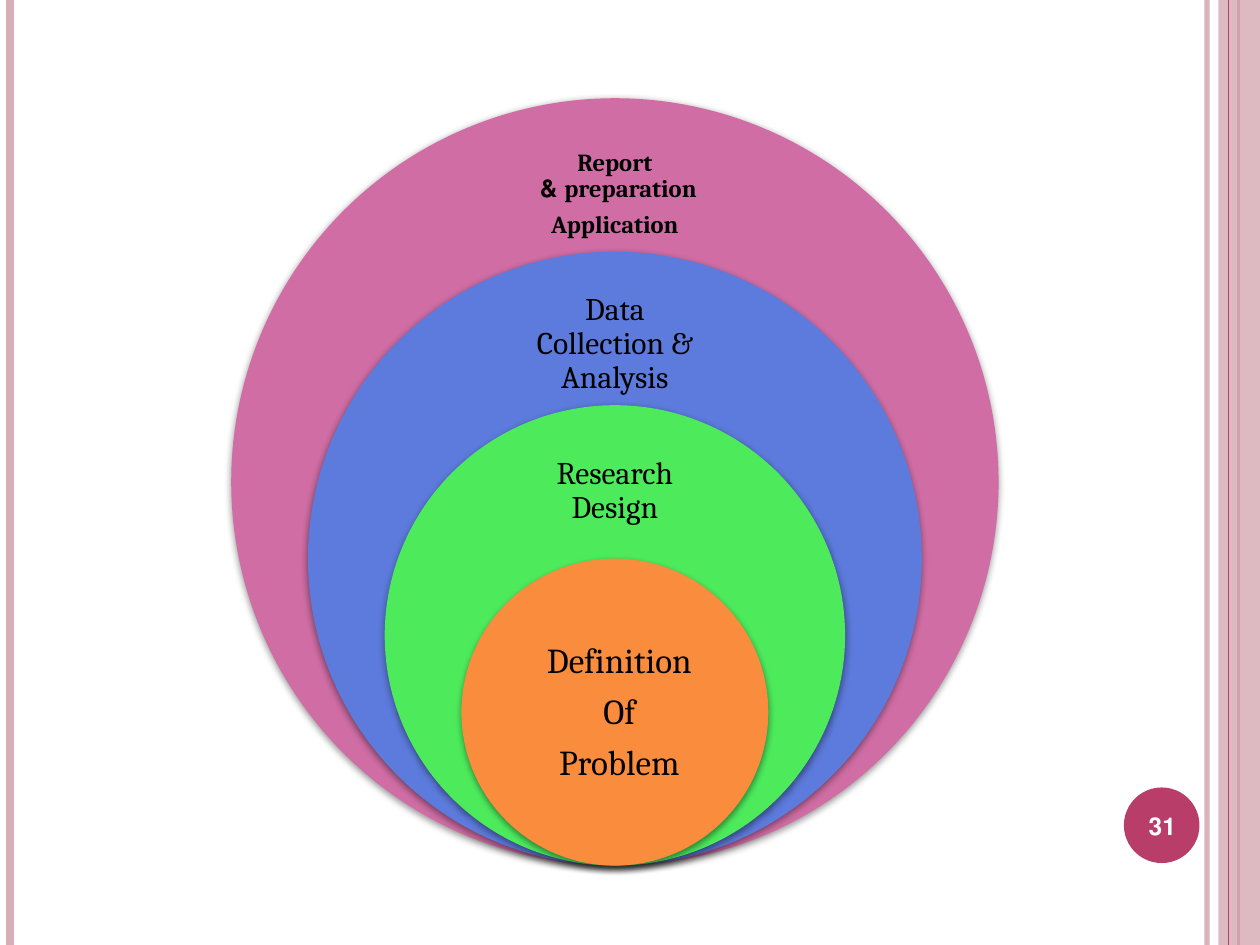
from lxml.etree import SubElement
from pptx import Presentation
from pptx.dml.color import RGBColor
from pptx.enum.shapes import MSO_CONNECTOR, MSO_SHAPE
from pptx.enum.text import MSO_ANCHOR, PP_ALIGN
from pptx.oxml.ns import qn
from pptx.util import Inches, Pt

PALE_ROSE, ROSE = "D8AFB9", "B83D68"
CENTER_X, BOTTOM, OUTER_DIAMETER = 4.88, 6.87, 6.09


def color(hex_string):
    return RGBColor.from_string(hex_string)


def set_alpha(fill_parent, percent):
    """Make the solid fill below the given element partly transparent."""
    rgb = fill_parent.find(".//" + qn("a:srgbClr"))
    SubElement(rgb, qn("a:alpha"), val=str(percent * 1000))


def write_text(frame, paragraphs, size, bold=False, text_color="000000",
               spacing=0.9, after=0.38):
    """Fill a frame with centred right-to-left paragraphs."""
    for index, text in enumerate(paragraphs):
        paragraph = frame.paragraphs[0] if index == 0 else frame.add_paragraph()
        paragraph.alignment = PP_ALIGN.CENTER
        paragraph.line_spacing = spacing
        paragraph.space_after = Pt(size * after)
        paragraph._p.get_or_add_pPr().set("rtl", "1")
        run = paragraph.add_run()
        run.text = text
        run.font.name = "Cambria"
        run.font.size = Pt(size)
        run.font.bold = bold
        run.font.color.rgb = color(text_color)


class SlideBuilder:
    def __init__(self, slide):
        self.slide = slide

    def vertical_line(self, x, width, hex_color, alpha=None):
        line = self.slide.shapes.add_connector(
            MSO_CONNECTOR.STRAIGHT, Inches(x), 0, Inches(x), Inches(7.5))
        line.line.width = Pt(width)
        line.line.color.rgb = color(hex_color)
        properties = line._element.spPr
        if alpha:
            set_alpha(properties, alpha)
        SubElement(properties, qn("a:effectLst"))

    def shape(self, kind, left, top, width, height, fill, alpha=None,
              shadow=False):
        shape = self.slide.shapes.add_shape(
            kind, Inches(left), Inches(top), Inches(width), Inches(height))
        shape.fill.solid()
        shape.fill.fore_color.rgb = color(fill)
        shape.line.fill.background()
        shape.shadow.inherit = False
        properties = shape._element.spPr
        if alpha:
            set_alpha(properties, alpha)
        if shadow:
            outer = SubElement(
                properties.find(qn("a:effectLst")), qn("a:outerShdw"),
                blurRad=str(Pt(4)), dist=str(Pt(1.6)), dir="5400000",
                rotWithShape="0")
            SubElement(outer, qn("a:srgbClr"), val="000000")
            set_alpha(outer, 42)

    def label(self, left, top, width, height, paragraphs, inset, **style):
        box = self.slide.shapes.add_textbox(
            Inches(left), Inches(top), Inches(width), Inches(height))
        frame = box.text_frame
        frame.word_wrap = True
        frame.vertical_anchor = MSO_ANCHOR.MIDDLE
        frame.margin_left = frame.margin_right = Inches(inset)
        frame.margin_top = frame.margin_bottom = Inches(inset)
        write_text(frame, paragraphs, **style)


def main():
    presentation = Presentation()
    presentation.slide_width = Inches(10)
    presentation.slide_height = Inches(7.5)
    builder = SlideBuilder(
        presentation.slides.add_slide(presentation.slide_layouts[6]))

    builder.vertical_line(9.58, 3, PALE_ROSE, alpha=93)
    builder.vertical_line(0.08, 4.5, PALE_ROSE)
    builder.vertical_line(9.83, 1.5, ROSE)
    builder.shape(MSO_SHAPE.RECTANGLE, 9.67, 0, 0.33, 7.5, PALE_ROSE, alpha=87)
    builder.vertical_line(9.75, 0.75, ROSE)
    builder.shape(MSO_SHAPE.OVAL, 8.92, 6.25, 0.6, 0.6, ROSE)
    builder.label(8.89, 6.27, 0.67, 0.57, ["31"], 0.05, size=14, bold=True,
                  text_color="FFFFFF", spacing=1, after=0)

    # Fill, label top, width and height, inset, size, bold, paragraphs
    stages = [
        ("CF6DA4", 1.09, 1.7, 0.91, 0.11, 14, True,
         ["Report preparation & ", "Application"]),
        ("5D7BDD", 2.29, 1.7, 0.88, 0.14, 18, False,
         ["Data Collection & Analysis"]),
        ("4DEB5C", 3.49, 1.7, 0.82, 0.14, 18, False, ["Research Design"]),
        ("FA8D3D", 5.05, 1.72, 1.22, 0.16, 20, False,
         ["Definition ", "Of ", "Problem "]),
    ]
    for index, stage in enumerate(stages):
        fill, top, width, height, inset, size, bold, paragraphs = stage
        diameter = OUTER_DIAMETER * (1 - 0.2 * index)
        builder.shape(MSO_SHAPE.OVAL, CENTER_X - diameter / 2,
                      BOTTOM - diameter, diameter, diameter, fill, shadow=True)
        builder.label(CENTER_X - width / 2, top, width, height, paragraphs,
                      inset, size=size, bold=bold)

    presentation.save("out.pptx")


if __name__ == "__main__":
    main()
